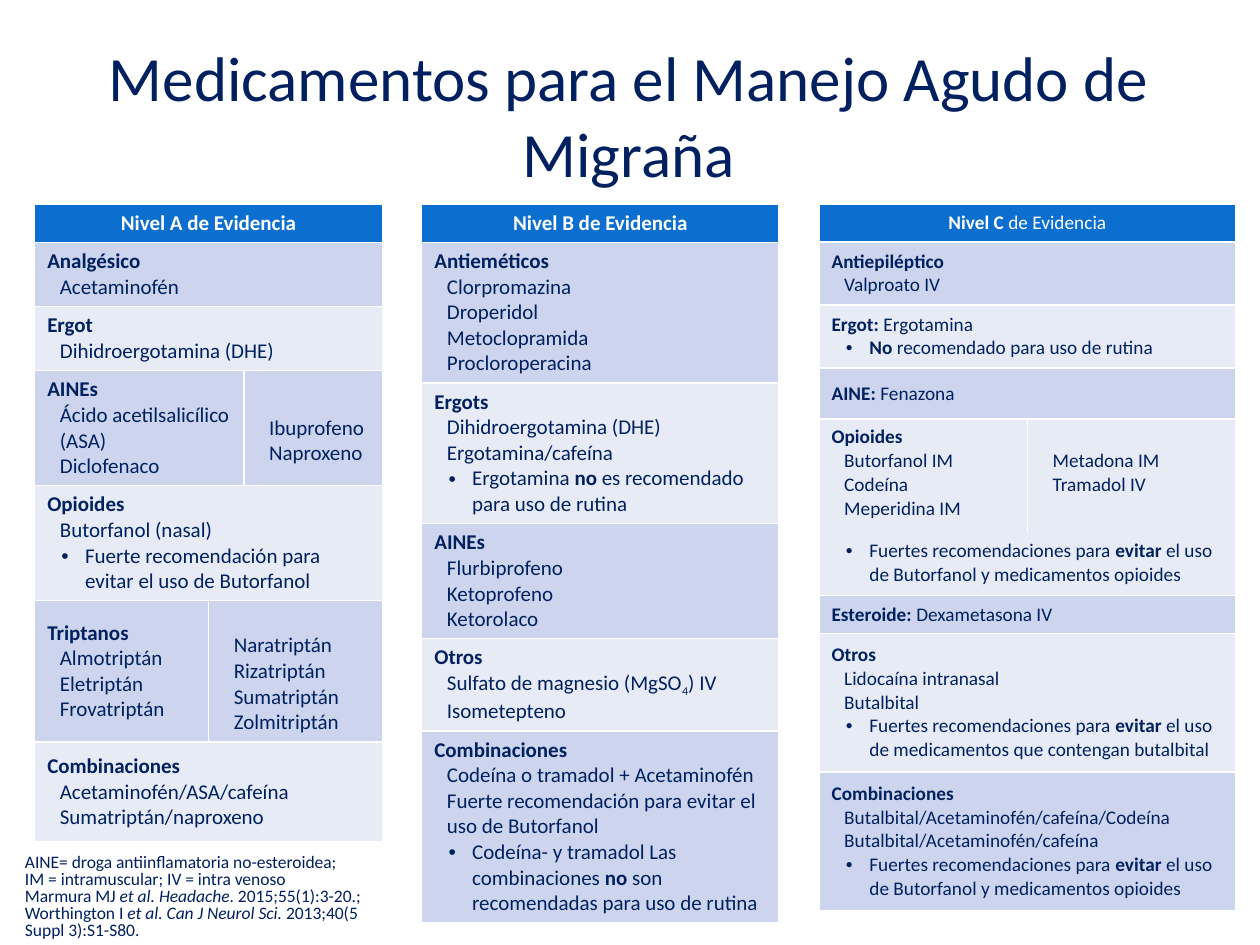
from lxml import etree
from pptx import Presentation
from pptx.dml.color import RGBColor
from pptx.enum.text import MSO_ANCHOR, PP_ALIGN
from pptx.oxml.ns import qn
from pptx.util import Pt

CENTER, MIDDLE, TOP = PP_ALIGN.CENTER, MSO_ANCHOR.MIDDLE, MSO_ANCHOR.TOP
FONT = "Calibri"
HEX = {"navy": "002060", "white": "FFFFFF", "head": "0C6FCF",
       "dark": "CCD5ED", "light": "E7EBF6"}

# Marks: "|" splits runs; a run may open with * bold, _ italic, ~ subscript.
# A paragraph may open with "- " (indented) or "• " (bullet).
TITLE = "Medicamentos para el Manejo Agudo de Migraña"
NOTES = [
    "AINE= droga antiinflamatoria no-esteroidea;\vIM = intramuscular; IV = intra venoso",
    "Marmura MJ |_et al. Headache|. 2015;55(1):3-20.; Worthington I "
    "|_et al. Can J Neurol Sci. |2013;40(5 Suppl 3):S1-S80.",
]
AVOID = "• Fuertes recomendaciones para |*evitar| el uso de "

# Rows: height, then {first column: paragraphs}; a cell spans up to the next one.
# "join" is a row that continues the one above, with no line between.
LEVELS = [
    {"left": 19.8, "size": 12, "cols": [99.4, 20.2, 79.2], "join": None, "rows": [
        (21.6, {0: ["*Nivel A de Evidencia"]}),
        (36.7, {0: ["*Analgésico", "- Acetaminofén"]}),
        (36.7, {0: ["*Ergot", "- Dihidroergotamina (DHE)"]}),
        (64.8, {0: ["*AINEs", "- Ácido acetilsalicílico (ASA)", "- Diclofenaco"],
                2: ["- Ibuprofeno", "- Naproxeno"]}),
        (64.8, {0: ["*Opioides", "- Butorfanol (nasal)",
                    "• Fuerte recomendación para evitar el uso de Butorfanol"]}),
        (80.6, {0: ["*Triptanos", "- Almotriptán", "- Eletriptán", "- Frovatriptán"],
                1: ["- Naratriptán", "- Rizatriptán", "- Sumatriptán",
                    "- Zolmitriptán"]}),
        (57.3, {0: ["*Combinaciones", "- Acetaminofén/ASA/cafeína",
                    "- Sumatriptán/naproxeno"]}),
    ]},
    {"left": 241, "size": 12, "cols": [204.2], "join": None, "rows": [
        (21.6, {0: ["*Nivel B de Evidencia"]}),
        (79.2, {0: ["*Antieméticos", "- Clorpromazina", "- Droperidol",
                    "- Metoclopramida", "- Procloroperacina"]}),
        (79.2, {0: ["*Ergots", "- Dihidroergotamina (DHE)", "- Ergotamina/cafeína",
                    "• Ergotamina |*no |es recomendado para uso de rutina"]}),
        (64.8, {0: ["*AINEs", "- Flurbiprofeno", "- Ketoprofeno", "- Ketorolaco"]}),
        (52.6, {0: ["*Otros", "- Sulfato de magnesio (MgSO|~4|) IV",
                    "- Isometepteno"]}),
        (107.5, {0: ["*Combinaciones", "- Codeína o tramadol + Acetaminofén",
                     "- Fuerte recomendación para evitar el uso de Butorfanol",
                     "• Codeína- y tramadol Las combinaciones |*no"
                     "| son recomendadas para uso de rutina"]}),
    ]},
    {"left": 468, "size": 11, "cols": [119.1, 119.1], "join": 5, "rows": [
        (21.6, {0: ["*Nivel C |de Evidencia"]}),
        (36, {0: ["*Antiepiléptico", "- Valproato IV"]}),
        (36, {0: ["*Ergot: |Ergotamina", "• |*No| recomendado para uso de rutina"]}),
        (29.3, {0: ["*AINE: |Fenazona"]}),
        (64.8, {0: ["*Opioides", "- Butorfanol IM", "- Codeína", "- Meperidina IM"],
                1: ["- Metadona IM", "- Tramadol IV"]}),
        (36, {0: [AVOID + "Butorfanol y medicamentos opioides"]}),
        (21.6, {0: ["*Esteroide: |Dexametasona IV"]}),
        (79.2, {0: ["*Otros", "- Lidocaína intranasal", "- Butalbital",
                    AVOID + "medicamentos que contengan butalbital"]}),
        (79.2, {0: ["*Combinaciones", "- Butalbital/Acetaminofén/cafeína/Codeína",
                    "- Butalbital/Acetaminofén/cafeína",
                    AVOID + "Butorfanol y medicamentos opioides"]}),
    ]},
]


def indent(par, left, first=0, mark=None):
    props = par._p.get_or_add_pPr()
    props.set("marL", str(Pt(left)))
    props.set("indent", str(Pt(first)))
    if mark:
        etree.SubElement(props, qn("a:buFont")).set("typeface", "Arial")
        etree.SubElement(props, qn("a:buChar")).set("char", mark)


def write(frame, lines, size, color="navy"):
    """Fill a text frame from marked-up lines."""
    for num, line in enumerate(lines):
        par = frame.add_paragraph() if num else frame.paragraphs[0]
        if line.startswith("- "):
            indent(par, 7.2)
            line = line[2:]
        elif line.startswith("• "):
            indent(par, 21.6, -13.5, "•")
            line = line[2:]
        par.font.name, par.font.size = FONT, Pt(size)
        par.font.color.rgb = RGBColor.from_string(HEX[color])
        for part in filter(None, line.split("|")):
            mark = part[0] if part[0] in "*_~" else ""
            for num_bit, bit in enumerate(part[len(mark):].split("\v")):
                if num_bit:
                    par.add_line_break()
                run = par.add_run()
                run.text = bit
                run.font.bold = mark == "*"
                if mark == "_":
                    run.font.italic = True
                elif mark == "~":
                    run.font._element.set("baseline", "-25000")


def clear(cell, side):
    """Remove one border line of a cell."""
    line = etree.Element(qn(f"a:{side}"))
    etree.SubElement(line, qn("a:noFill"))
    cell._tc.get_or_add_tcPr().insert(0, line)


def draw(slide, level):
    cols, rows, join = level["cols"], level["rows"], level["join"]
    size = level["size"]
    high = sum(row[0] for row in rows)
    table = slide.shapes.add_table(len(rows), len(cols), Pt(level["left"]), Pt(116.6),
                                   Pt(sum(cols)), Pt(high)).table
    for col, wide in zip(table.columns, cols):
        col.width = Pt(wide)
    shade = "light"
    for num, (tall, cells) in enumerate(rows):
        table.rows[num].height = Pt(tall)
        if num and num != join:
            shade = "dark" if shade == "light" else "light"
        joined = join is not None and num in (join - 1, join)
        ends = [*list(cells)[1:], len(cols)]
        for (first, lines), end in zip(cells.items(), ends):
            cell = table.cell(num, first)
            if end - first > 1:
                cell.merge(table.cell(num, end - 1))
            cell.vertical_anchor = TOP if joined else MIDDLE
            if first:  # level with the items beside it, below their heading
                cell.margin_top = Pt(3.6 + 1.22 * size)
            write(cell.text_frame, lines, size, "navy" if num else "white")
            if not num:
                cell.text_frame.paragraphs[0].alignment = CENTER
        for col in range(len(cols)):
            cell = table.cell(num, col)
            cell.fill.solid()
            cell.fill.fore_color.rgb = RGBColor.from_string(HEX[shade if num else "head"])
            if joined:
                clear(cell, "lnT" if num == join else "lnB")


deck = Presentation()
deck.slide_width, deck.slide_height = Pt(720), Pt(540)
slide = deck.slides.add_slide(deck.slide_layouts[5])

title = slide.shapes.title
title.left, title.top, title.width, title.height = Pt(35.3), Pt(20.2), Pt(648), Pt(90)
title.text_frame.vertical_anchor = MIDDLE
write(title.text_frame, [TITLE], 36)
title.text_frame.paragraphs[0].alignment = CENTER

for level in LEVELS:
    draw(slide, level)

notes = slide.shapes.add_textbox(Pt(7.2), Pt(485.3), Pt(227.5), Pt(54.7)).text_frame
notes.word_wrap = True
write(notes, NOTES, 10)
for par in notes.paragraphs:
    par.line_spacing = 0.8

deck.save("out.pptx")
